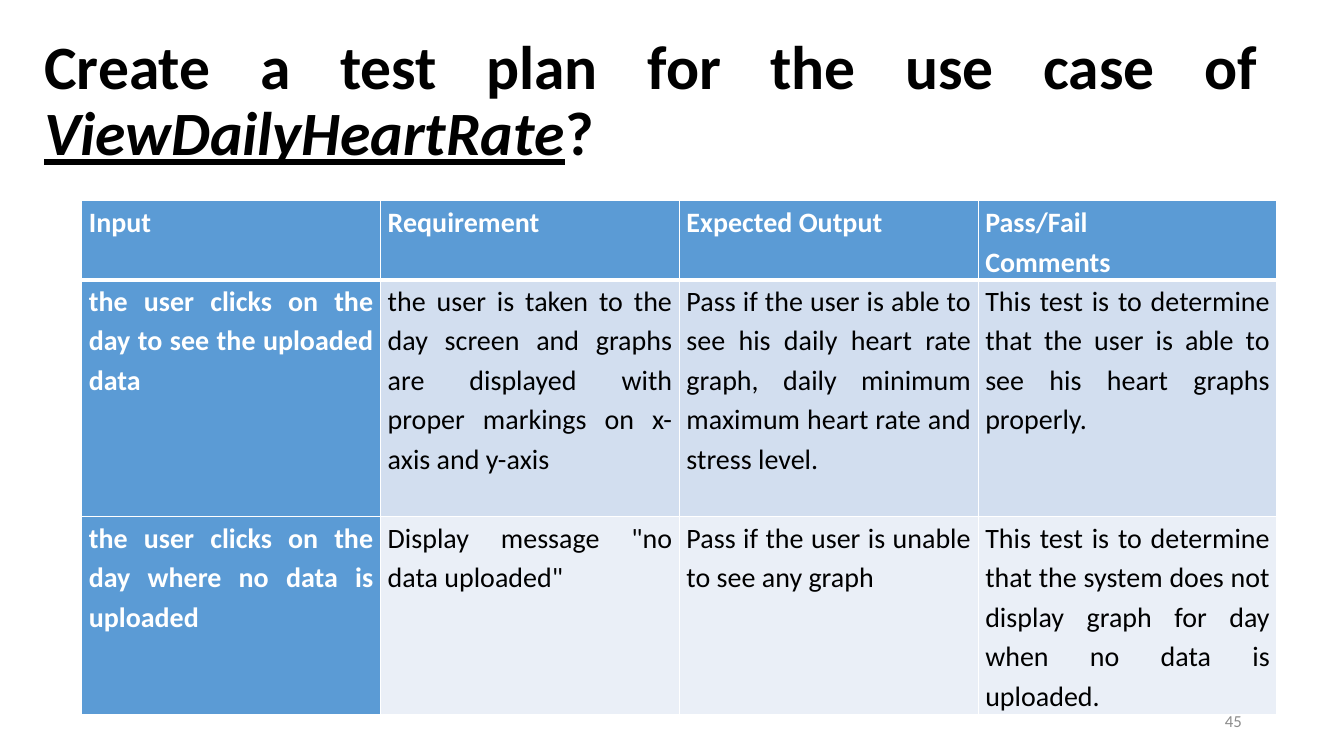
import pptx
import pptx.dml.color
import pptx.enum.text
import pptx.oxml
import pptx.oxml.ns
import pptx.util
from pptx.dml.color import RGBColor
from pptx.enum.text import MSO_ANCHOR, PP_ALIGN
from pptx.util import Cm

FONT = "Calibri"
BLACK = RGBColor(0x00, 0x00, 0x00)
WHITE = RGBColor(0xFF, 0xFF, 0xFF)
BLUE = RGBColor(0x5B, 0x9B, 0xD5)
GREY = RGBColor(0x8C, 0x8C, 0x8C)
ROW_BANDS = (RGBColor(0xEA, 0xEF, 0xF7), RGBColor(0xD2, 0xDE, 0xEF))

TEST_PLAN = [
    ["Input", "Requirement", "Expected Output", "Pass/Fail\nComments"],
    [
        "the user clicks on the day to see the uploaded data",
        "the user is taken to the day screen and graphs are displayed "
        "with proper markings on x-axis and y-axis",
        "Pass if the user is able to see his daily heart rate graph, "
        "daily minimum maximum heart rate and stress level.",
        "This test is to determine that the user is able to see his "
        "heart graphs properly.",
    ],
    [
        "the user clicks on the day where no data is uploaded",
        'Display message "no data uploaded"',
        "Pass if the user is unable to see any graph",
        "This test is to determine that the system does not display "
        "graph for day when no data is uploaded.",
    ],
]
ROW_HEIGHTS = (Cm(1.97), Cm(5.97), Cm(4.98))
COLUMN_WIDTH = Cm(7.53)


def format_paragraph(paragraph, size, color, alignment, bold=False):
    paragraph.alignment = alignment
    paragraph.font.name = FONT
    paragraph.font.size = pptx.util.Pt(size)
    paragraph.font.bold = bold
    paragraph.font.color.rgb = color


def add_title(slide):
    title = slide.shapes.title
    title.left, title.top = Cm(0.86), Cm(0.74)
    title.width, title.height = Cm(31.12), Cm(3.68)
    frame = title.text_frame
    frame.vertical_anchor = MSO_ANCHOR.MIDDLE
    frame.auto_size = pptx.enum.text.MSO_AUTO_SIZE.NONE
    heading = frame.paragraphs[0]
    format_paragraph(heading, 44, BLACK, PP_ALIGN.JUSTIFY, bold=True)
    heading.line_spacing = 0.9
    heading.add_run().text = "Create a test plan for the use case of "
    use_case = heading.add_run()
    use_case.text = "ViewDailyHeartRate"
    use_case.font.italic = use_case.font.underline = True
    heading.add_run().text = "?"


def add_borders(cell, bottom_points):
    """Draw white lines around the cell; call before the cell is filled."""
    properties = cell._tc.get_or_add_tcPr()
    sides = {"lnL": 1, "lnR": 1, "lnT": 1, "lnB": bottom_points}
    for side, points in sides.items():
        properties.append(pptx.oxml.parse_xml(
            f'<a:{side} {pptx.oxml.ns.nsdecls("a")} w="{pptx.util.Pt(points)}">'
            f'<a:solidFill><a:srgbClr val="{WHITE}"/></a:solidFill></a:{side}>'
        ))


def fill_cell(cell, text, row, column):
    is_heading = row == 0 or column == 0
    add_borders(cell, bottom_points=3 if row == 0 else 1)
    cell.fill.solid()
    cell.fill.fore_color.rgb = BLUE if is_heading else ROW_BANDS[row % 2]
    cell.margin_left = cell.margin_right = Cm(0.18)
    cell.margin_top = cell.margin_bottom = 0
    cell.text = text
    for paragraph in cell.text_frame.paragraphs:
        format_paragraph(paragraph, 20, WHITE if is_heading else BLACK,
                         PP_ALIGN.JUSTIFY, bold=is_heading)
        paragraph.line_spacing = 1.15


def add_test_plan(slide):
    column_count = len(TEST_PLAN[0])
    plan = slide.shapes.add_table(
        len(TEST_PLAN), column_count, Cm(2.06), Cm(5.06),
        COLUMN_WIDTH * column_count, sum(ROW_HEIGHTS),
    ).table
    for column in plan.columns:
        column.width = COLUMN_WIDTH
    for row, texts in enumerate(TEST_PLAN):
        plan.rows[row].height = ROW_HEIGHTS[row]
        for column, text in enumerate(texts):
            fill_cell(plan.cell(row, column), text, row, column)


def add_page_number(slide, number):
    frame = slide.shapes.add_textbox(
        Cm(23.93), Cm(17.65), Cm(7.62), Cm(1.02)).text_frame
    frame.word_wrap = True
    frame.vertical_anchor = MSO_ANCHOR.MIDDLE
    frame.text = number
    format_paragraph(frame.paragraphs[0], 12, GREY, PP_ALIGN.RIGHT)


def main():
    presentation = pptx.Presentation()
    presentation.slide_width = Cm(33.87)
    presentation.slide_height = Cm(19.05)
    title_only = presentation.slide_layouts.get_by_name("Title Only")
    slide = presentation.slides.add_slide(title_only)
    add_title(slide)
    add_test_plan(slide)
    add_page_number(slide, "45")
    presentation.save("out.pptx")


if __name__ == "__main__":
    main()
